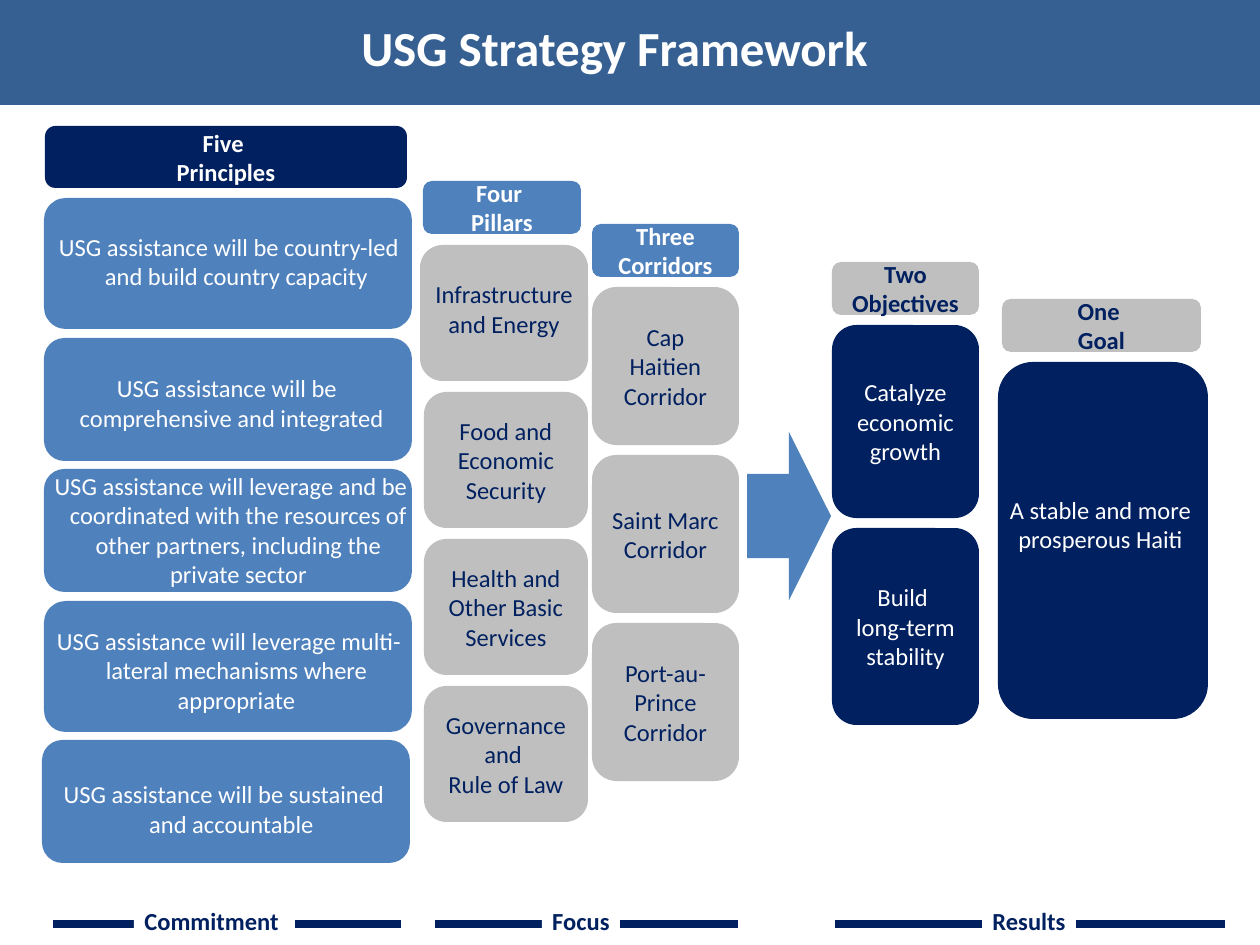
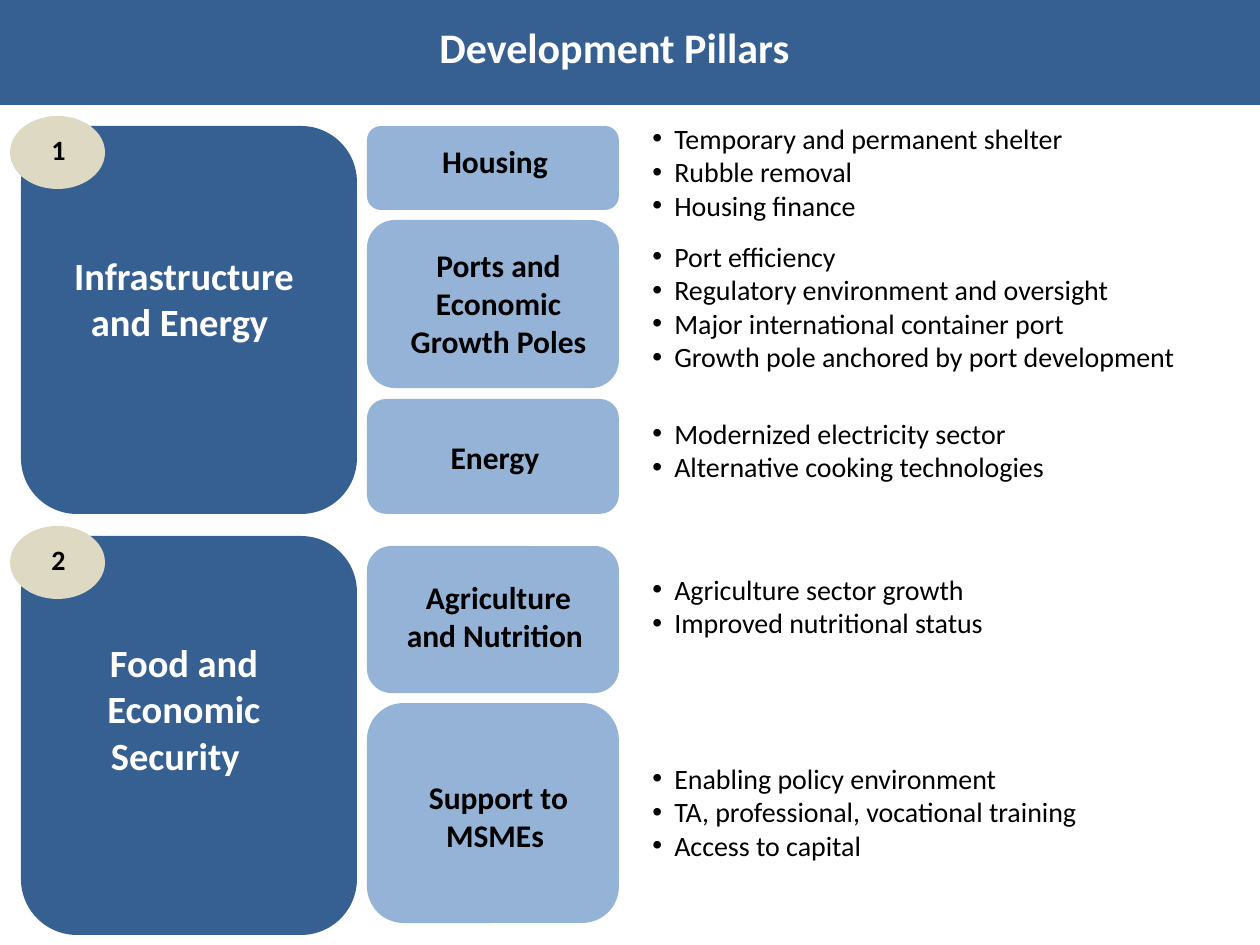
from lxml import etree
from pptx import Presentation
from pptx.dml.color import RGBColor
from pptx.enum.shapes import MSO_CONNECTOR, MSO_SHAPE
from pptx.enum.text import MSO_ANCHOR, PP_ALIGN
from pptx.oxml.ns import qn
from pptx.util import Pt

PX = 914400 / 126
FONT = "Calibri"
HUES = {
    "band": "376092", "blue": "4F81BD", "navy": "002060", "grey": "BFBFBF",
    "sky": "95B3D7", "sand": "DDD9C3", "white": "FFFFFF", "black": "000000",
}
ROUND = MSO_SHAPE.ROUNDED_RECTANGLE


def draw(slide, area, kind=None, fill=None):
    """Add a filled shape, or a text box when no kind is given."""
    place = [round(v * PX) for v in area]
    if kind is None:
        return slide.shapes.add_textbox(*place)
    shape = slide.shapes.add_shape(kind, *place)
    shape.shadow.inherit = False
    shape.fill.solid()
    shape.fill.fore_color.rgb = RGBColor.from_string(HUES[fill])
    shape.line.fill.background()
    return shape


def write(shape, paras, size, hue, bold=False, top=False, hang=0, dots=False):
    """Fill a shape with paragraphs; a newline becomes a line break."""
    frame = shape.text_frame
    frame.word_wrap = True
    frame.vertical_anchor = MSO_ANCHOR.TOP if top else MSO_ANCHOR.MIDDLE
    for i, text in enumerate(paras):
        para = frame.add_paragraph() if i else frame.paragraphs[0]
        para.alignment = PP_ALIGN.LEFT if dots else PP_ALIGN.CENTER
        props = para._p.get_or_add_pPr()
        if hang:
            props.set("marL", str(round(hang * PX)))
            props.set("indent", str(round(-hang * PX)))
        if dots:
            etree.SubElement(props, qn("a:buFont")).set("typeface", "Arial")
            etree.SubElement(props, qn("a:buChar")).set("char", "•")
        for j, part in enumerate(text.split("\n")):
            if j:
                para.add_line_break()
            run = para.add_run()
            run.text = part
            run.font.name = FONT
            run.font.size = Pt(size)
            run.font.bold = bold
            run.font.color.rgb = RGBColor.from_string(HUES[hue])


deck = Presentation()
deck.slide_width = round(1260 * PX)
deck.slide_height = round(945 * PX)

# Shared title band
pages = []
for title, size in [("USG Strategy Framework", 28), ("Development Pillars", 24)]:
    page = deck.slides.add_slide(deck.slide_layouts[6])
    draw(page, (0, 0, 1260, 105), MSO_SHAPE.RECTANGLE, "band")
    write(draw(page, (84, 10, 1061, 73)), [title], size, "white", True)
    pages.append(page)
frame, pillars = pages

# Slide 1: column heads
heads = [
    ("Five \nPrinciples", (45, 126, 362, 62), "navy", "white"),
    ("Four \nPillars", (423, 181, 158, 53), "blue", "white"),
    ("Three Corridors", (592, 224, 147, 53), "blue", "white"),
    ("Two Objectives", (832, 262, 147, 53), "grey", "navy"),
    ("One \nGoal", (1002, 299, 199, 53), "grey", "navy"),
]
for text, area, fill, hue in heads:
    write(draw(frame, area, ROUND, fill), [text], 14, hue, True)

# Five principles: box left, top, height, then the area of the words
rules = [
    ("USG assistance will be country-led and build country capacity",
     (44, 198, 131), (45, 200, 368, 123)),
    ("USG assistance will be comprehensive and integrated ",
     (44, 338, 123), (38, 329, 378, 147)),
    ("USG assistance will leverage and be coordinated with the resources of "
     "other partners, including the private sector",
     (44, 469, 123), (42, 476, 378, 107)),
    ("USG assistance will leverage multi-lateral mechanisms where appropriate",
     (44, 601, 131), (42, 616, 374, 108)),
    ("USG assistance will be sustained and accountable",
     (42, 740, 123), (35, 735, 378, 147)),
]
for text, (left, top, high), area in rules:
    draw(frame, (left, top, 368, high), ROUND, "blue")
    write(draw(frame, area), [text], 14, "white", hang=15)

# Four pillars, the first one a little wider
draw(frame, (420, 245, 168, 136), ROUND, "grey")
write(draw(frame, (420, 273, 168, 111)), ["Infrastructure and Energy"],
      14, "navy", top=True)
needs = ["Food and Economic Security", "Health and Other Basic Services",
         "Governance and \nRule of Law"]
for i, text in enumerate(needs):
    box = draw(frame, (424, 392 + 147 * i, 164, 136), ROUND, "grey")
    write(box, [text], 14, "navy")

# Three corridors
zones = ["Cap Haitien Corridor", "Saint Marc Corridor", "Port-au-Prince Corridor"]
for i, text in enumerate(zones):
    box = draw(frame, (592, 287 + 168 * i, 147, 158), ROUND, "grey")
    write(box, [text], 14, "navy")

# Arrow, objectives and goal
draw(frame, (747, 432, 84, 168), MSO_SHAPE.RIGHT_ARROW, "blue")
aims = [("Catalyze economic growth", 325, 193),
        ("Build \nlong-term stability", 528, 197)]
for text, top, high in aims:
    box = draw(frame, (832, top, 147, high), ROUND, "navy")
    write(box, [text], 14, "white")
draw(frame, (998, 362, 210, 357), ROUND, "navy")
write(draw(frame, (994, 425, 213, 198)),
      ["A stable and more prosperous Haiti"], 14, "white")

# Footer rules with their labels
feet = [("Commitment ", 53, 401, 134, 161), ("Focus", 435, 738, 542, 78),
        ("Results", 835, 1225, 982, 94)]
for text, start, end, left, wide in feet:
    rule = frame.shapes.add_connector(
        MSO_CONNECTOR.STRAIGHT,
        *[round(v * PX) for v in (start, 924, end, 924)])
    rule.line.color.rgb = RGBColor.from_string(HUES["navy"])
    rule.line.width = Pt(4.25)
    etree.SubElement(rule._element.spPr, qn("a:effectLst"))
    tag = draw(frame, (left, 896, wide, 49), MSO_SHAPE.RECTANGLE, "white")
    write(tag, [text], 14, "navy", True, top=True)
    tag.text_frame.word_wrap = False
    tag.text_frame.margin_top = round(10 * PX)

# Slide 2: numbered pillars
groups = [("Infrastructure and Energy ", 126, 388),
          ("Food and Economic Security  ", 536, 399)]
for i, (text, top, high) in enumerate(groups):
    draw(pillars, (21, top, 336, high), ROUND, "band")
    write(draw(pillars, (53, top + 136, 262, 73)), [text], 22, "white", True)
    draw(pillars, (10, top - 10, 95, 73), MSO_SHAPE.OVAL, "sand")
    write(draw(pillars, (32, top, 53, 47)), [str(i + 1)], 16, "black", True, top=True)

# Themes: box top and height, top of the name, top of the list
themes = [
    ("Housing ", 126, 84, 136, 115,
     ["Temporary and permanent shelter", "Rubble removal", "Housing finance"]),
    ("Ports and Economic Growth Poles", 220, 168, 240, 233,
     ["Port efficiency", "Regulatory environment and oversight",
      "Major international container port",
      "Growth pole anchored by port development"]),
    ("Energy ", 399, 115, 432, 410,
     ["Modernized electricity sector", "Alternative cooking technologies"]),
    ("Agriculture and Nutrition ", 546, 147, 572, 566,
     ["Agriculture sector growth", "Improved nutritional status"]),
    ("Support to MSMEs ", 703, 220, 772, 755,
     ["Enabling policy environment", "TA, professional, vocational training",
      "Access to capital"]),
]
for name, top, high, head, list_top, items in themes:
    draw(pillars, (367, top, 252, high), ROUND, "sky")
    write(draw(pillars, (388, head, 221, 50)), [name], 18, "black", True, top=True)
    notes = draw(pillars, (640, list_top, 577, 34 * len(items) + 13))
    write(notes, items, 16, "black", top=True, hang=22, dots=True)

deck.save("out.pptx")
